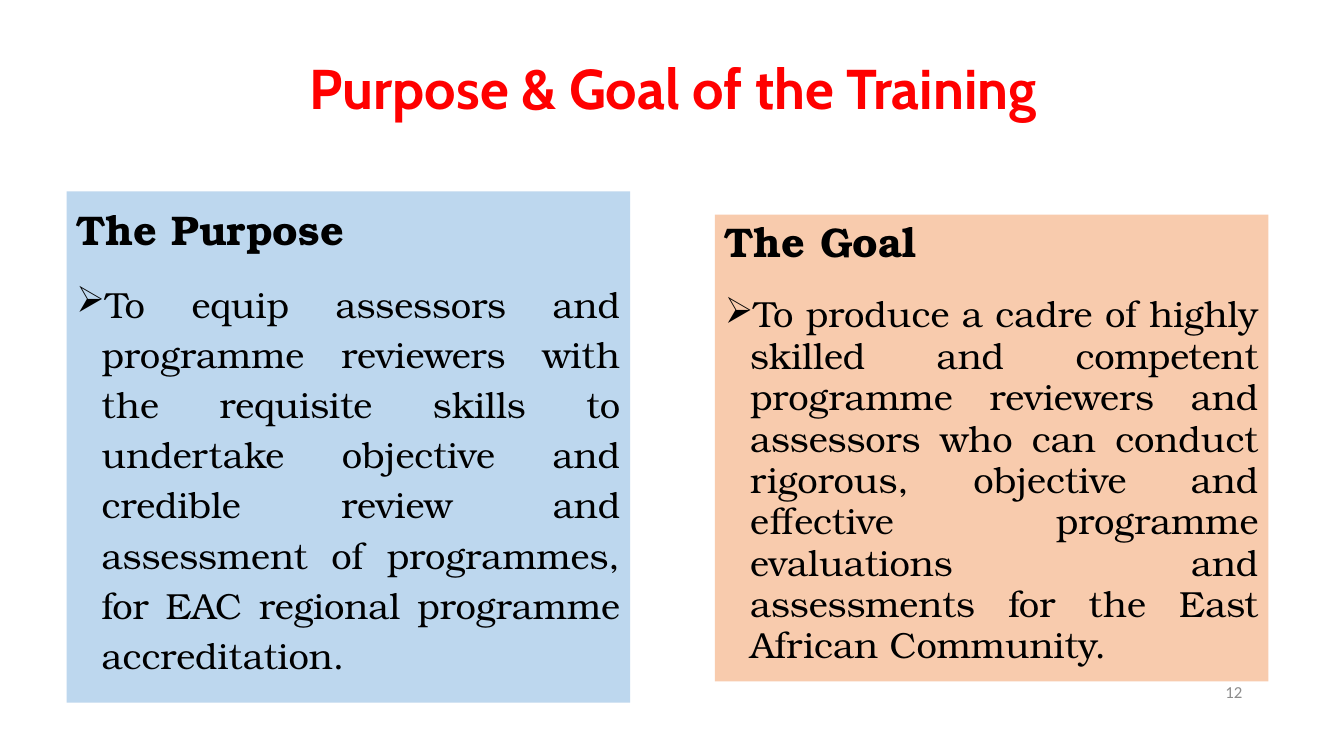
from dataclasses import dataclass

from lxml import etree
from pptx import Presentation
from pptx import util as u
from pptx.dml.color import RGBColor
from pptx.enum import shapes, text
from pptx.oxml import ns

PX = 9144  # EMU per px, 100 px to the inch


@dataclass(frozen=True)
class Theme:
    title_font: str = "Cabin"
    body_font: str = "TeX Gyre Bonum"
    number_font: str = "Calibri"
    title_size: float = 40
    heading_size: float = 29.6
    body_size: float = 25.9
    number_size: float = 12
    title_color: str = "FF0000"
    text_color: str = "000000"
    number_color: str = "8C8C8C"
    purpose_fill: str = "BDD7EE"
    goal_fill: str = "F8CBAD"


class Deck:
    def __init__(self, theme, width, height):
        self.theme = theme
        self.prs = Presentation()
        self.prs.slide_width, self.prs.slide_height = width * PX, height * PX
        self.s = self.prs.slides.add_slide(self.prs.slide_layouts[6])

    def style(self, p, font, size, color, bold=False):
        for r in p.runs:
            r.font.name, r.font.size, r.font.bold = font, u.Pt(size), bold
            r.font.color.rgb = RGBColor.from_string(color)

    def label(self, box, words, align, font, size, color, bold=False, spacing=1.0):
        sp = self.s.shapes.add_textbox(*(v * PX for v in box))
        tf = sp.text_frame
        tf.word_wrap = True
        tf.vertical_anchor = text.MSO_ANCHOR.MIDDLE
        tf.text = words
        p = tf.paragraphs[0]
        p.alignment, p.line_spacing = align, spacing
        self.style(p, font, size, color, bold)

    def bullet(self, p, char, indent):
        pPr = p._p.get_or_add_pPr()
        pPr.set("marL", str(indent * PX))
        pPr.set("indent", str(-indent * PX))
        etree.SubElement(pPr, ns.qn("a:buChar")).set("char", char)

    def panel(self, box, fill, heading, body, spacing, heading_align, heading_after):
        t = self.theme
        sp = self.s.shapes.add_shape(shapes.MSO_SHAPE.RECTANGLE, *(v * PX for v in box))
        sp.shadow.inherit = False
        sp.fill.solid()
        sp.fill.fore_color.rgb = RGBColor.from_string(fill)
        sp.line.fill.background()
        tf = sp.text_frame
        tf.word_wrap = True
        tf.vertical_anchor = text.MSO_ANCHOR.TOP

        # Heading
        tf.text = heading
        p = tf.paragraphs[0]
        p.alignment, p.line_spacing = heading_align, spacing
        p.space_after = u.Pt(heading_after)
        self.style(p, t.body_font, t.heading_size, t.text_color, bold=True)

        # Bulleted statement
        p = tf.add_paragraph()
        p.text = body
        p.alignment, p.line_spacing = text.PP_ALIGN.JUSTIFY, spacing
        p.space_before = p.space_after = u.Pt(10)
        self.bullet(p, "➢", 25)
        self.style(p, t.body_font, t.body_size, t.text_color)


def main():
    t = Theme()
    deck = Deck(t, 1333, 750)
    align = text.PP_ALIGN

    # Title
    deck.label((173, 40, 1002, 101), "Purpose & Goal of the Training ", align.CENTER,
               t.title_font, t.title_size, t.title_color, bold=True, spacing=0.9)

    # Purpose panel
    deck.panel((66, 190, 559, 507), t.purpose_fill, "The Purpose",
               "To equip assessors and programme reviewers with the requisite skills to "
               "undertake objective and credible review and assessment of programmes, "
               "for EAC regional programme accreditation.",
               1.15, align.LEFT, 6)

    # Slide number
    deck.label((942, 666, 300, 40), "12", align.RIGHT,
               t.number_font, t.number_size, t.number_color)

    # Goal panel
    deck.panel((709, 213, 549, 463), t.goal_fill, "The Goal",
               "To produce a cadre of highly skilled and competent programme reviewers "
               "and assessors who can conduct rigorous, objective and effective programme "
               "evaluations and assessments for the East African Community.",
               0.95, align.JUSTIFY, 10)

    deck.prs.save("out.pptx")


if __name__ == "__main__":
    main()
